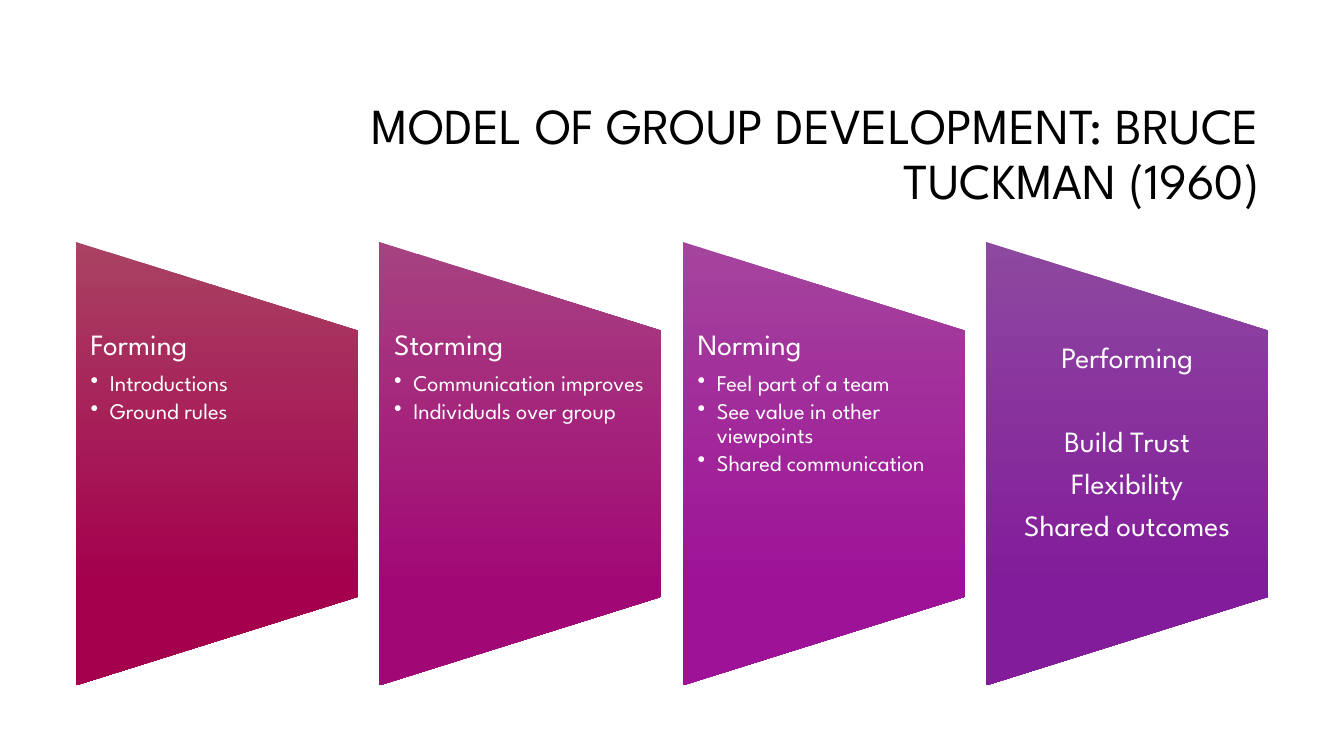
from pptx import Presentation
from pptx.dml.color import RGBColor
from pptx.enum.shapes import MSO_SHAPE
from pptx.enum.text import MSO_ANCHOR, PP_ALIGN
from pptx.oxml.ns import qn
from pptx.util import Inches, Pt

PANEL = MSO_SHAPE.FLOWCHART_MANUAL_OPERATION
TOP, MIDDLE = MSO_ANCHOR.TOP, MSO_ANCHOR.MIDDLE
LEFT, CENTER, RIGHT = PP_ALIGN.LEFT, PP_ALIGN.CENTER, PP_ALIGN.RIGHT

FONT = "League Spartan"
WHITE, BLACK = "FFFFFF", "000000"
HEAD_SIZE, BULLET_SIZE = 21, 16
HEAD_GAP, BULLET_GAP, STAGE_GAP = 7.35, 2.4, 37.4
GRID_LEFT, GRID_PITCH = 0.75, 3.01
PANEL_W, PANEL_H, PANEL_MID = 2.8, 4.4, 4.6
TEXT_H = PANEL_H * 0.6

BULLET_STAGES = [
    ("Forming", ["Introductions", "Ground rules"], "A94263", "A4004E"),
    ("Storming", ["Communication improves", "Individuals over group"],
     "A74281", "A20875"),
    ("Norming", ["Feel part of a team", "See value in other viewpoints",
                 "Shared communication"], "A4449D", "9E1297"),
]
FINAL_STAGE = ("Performing", ["Build Trust", "Flexibility", "Shared outcomes"],
               "8D48A0", "831C9A")


def rgb(value):
    """Turn a hex string into a colour."""
    return RGBColor.from_string(value)


def add_panel(slide, column, top_color, bottom_color):
    """Draw one tapering panel, turned on its side, in a grid column."""
    middle = GRID_LEFT + column * GRID_PITCH + PANEL_W / 2
    sp = slide.shapes.add_shape(
        PANEL, Inches(middle - PANEL_H / 2), Inches(PANEL_MID - PANEL_W / 2),
        Inches(PANEL_H), Inches(PANEL_W))
    sp.rotation = 270
    sp.shadow.inherit = False
    sp.line.fill.background()
    sp.fill.gradient()
    sp.fill.gradient_angle = 270
    stops = zip(sp.fill.gradient_stops, (0, 0.78), (top_color, bottom_color))
    for stop, position, color in stops:
        stop.position = position
        stop.color.rgb = rgb(color)
    sp._element.spPr.find(qn("a:gradFill")).set("rotWithShape", "0")


def add_box(slide, left, top, width, height, anchor):
    """Add a wrapping text box and return its text frame."""
    sp = slide.shapes.add_textbox(
        Inches(left), Inches(top), Inches(width), Inches(height))
    tf = sp.text_frame
    tf.word_wrap = True
    tf.vertical_anchor = anchor
    return tf


def add_stage_box(slide, column, anchor, bottom=0):
    """Add the text box that lies on a panel."""
    tf = add_box(slide, GRID_LEFT + column * GRID_PITCH,
                 PANEL_MID - TEXT_H / 2, PANEL_W, TEXT_H, anchor)
    tf.margin_left = tf.margin_right = Inches(0.15)
    tf.margin_top = 0
    tf.margin_bottom = Pt(bottom)
    return tf


def write(p, text, size, color, align=LEFT, after=0):
    """Set a paragraph's text and its format."""
    p.text = text
    p.alignment = align
    p.line_spacing = 0.9
    p.space_after = Pt(after)
    for r in p.runs:
        r.font.name = FONT
        r.font.size = Pt(size)
        r.font.color.rgb = rgb(color)


def add_bullet(p):
    """Give a paragraph a hanging bullet."""
    pPr = p._p.get_or_add_pPr()
    pPr.set("marL", str(Inches(0.19)))
    pPr.set("indent", str(-Inches(0.19)))
    bullet = pPr.makeelement(qn("a:buChar"), {"char": "•"})
    pPr.append(bullet)


def add_bullet_stage(slide, column, name, points, top_color, bottom_color):
    """Add a panel with a heading and bullets."""
    add_panel(slide, column, top_color, bottom_color)
    tf = add_stage_box(slide, column, TOP)
    write(tf.paragraphs[0], name, HEAD_SIZE, WHITE, after=HEAD_GAP)
    for point in points:
        p = tf.add_paragraph()
        add_bullet(p)
        write(p, point, BULLET_SIZE, WHITE, after=BULLET_GAP)


def add_centered_stage(slide, column, name, points, top_color, bottom_color):
    """Add a panel with a heading and centred lines."""
    add_panel(slide, column, top_color, bottom_color)
    tf = add_stage_box(slide, column, MIDDLE, bottom=STAGE_GAP - HEAD_GAP)
    write(tf.paragraphs[0], name, HEAD_SIZE, WHITE, CENTER, STAGE_GAP)
    for point in points:
        write(tf.add_paragraph(), point, HEAD_SIZE, WHITE, CENTER, HEAD_GAP)


def main():
    """Build the slide and save it."""
    prs = Presentation()
    prs.slide_width, prs.slide_height = Inches(13.33), Inches(7.5)
    slide = prs.slides.add_slide(prs.slide_layouts[6])
    tf = add_box(slide, 3.17, 0.84, 9.42, 1.41, MIDDLE)
    write(tf.paragraphs[0], "MODEL OF GROUP DEVELOPMENT: BRUCE TUCKMAN (1960)",
          36, BLACK, RIGHT)
    for column, stage in enumerate(BULLET_STAGES):
        add_bullet_stage(slide, column, *stage)
    add_centered_stage(slide, len(BULLET_STAGES), *FINAL_STAGE)
    prs.save("out.pptx")


if __name__ == "__main__":
    main()
